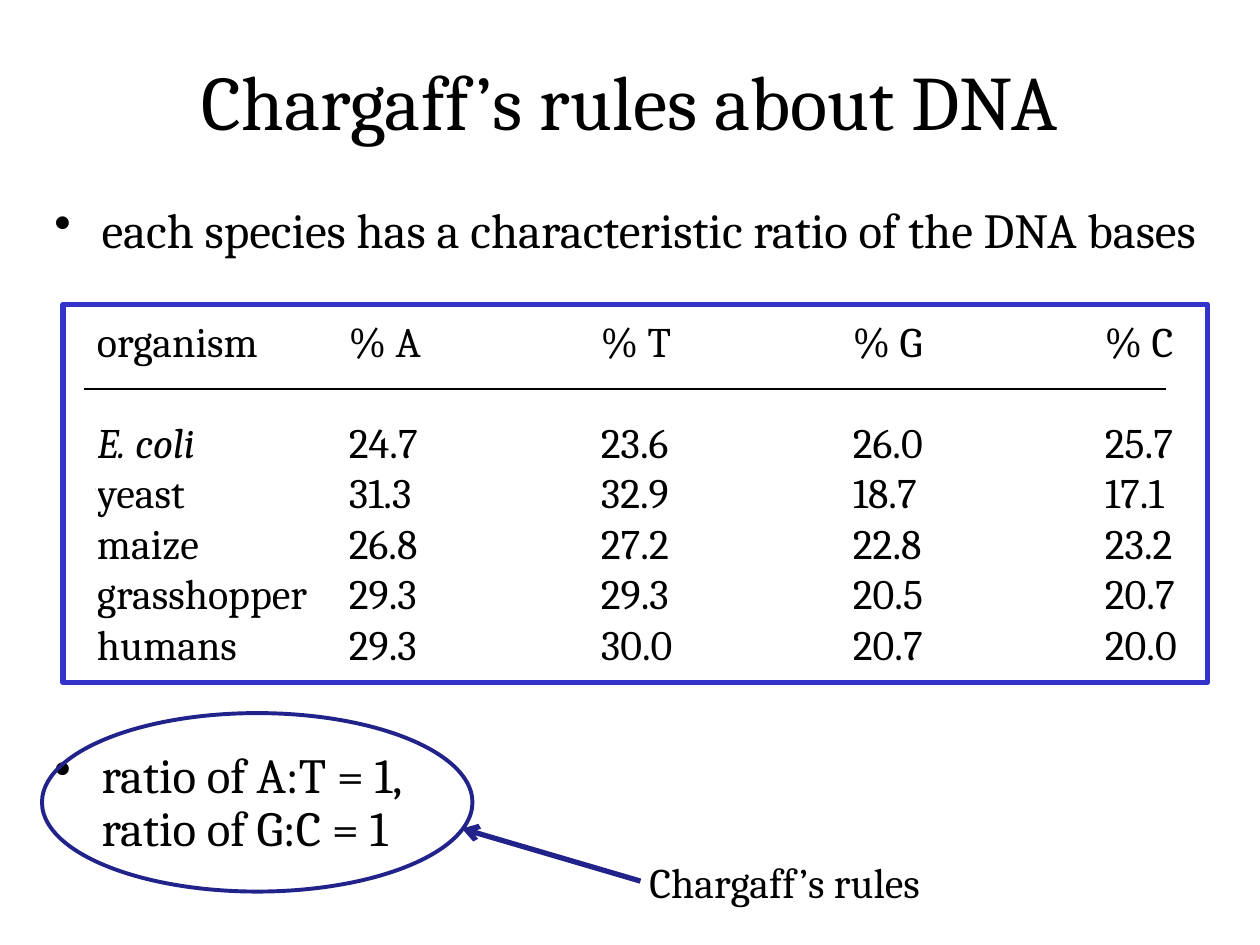
from lxml import etree
from pptx import Presentation
from pptx.dml.color import RGBColor
from pptx.enum.shapes import MSO_CONNECTOR, MSO_SHAPE
from pptx.enum.text import MSO_ANCHOR, PP_ALIGN
from pptx.oxml.ns import qn
from pptx.util import Pt

COLORS = {"text": "000000", "frame": "3333CC", "callout": "22228B"}
FONT = "Cambria"
LINE = 28.8  # height of one line of 24 pt text
ROWS = [
    ("organism", "% A", "% T", "% G", "% C"),
    ("E. coli", "24.7", "23.6", "26.0", "25.7"),
    ("yeast", "31.3", "32.9", "18.7", "17.1"),
    ("maize", "26.8", "27.2", "22.8", "23.2"),
    ("grasshopper", "29.3", "29.3", "20.5", "20.7"),
    ("humans", "29.3", "30.0", "20.7", "20.0"),
]


def color(name):
    return RGBColor.from_string(COLORS[name])


def write(para, text, size, italic=False):
    span = para.add_run()
    span.text = text
    formats = {"name": FONT, "size": Pt(size), "italic": italic}
    for name, value in formats.items():
        setattr(span.font, name, value)
    span.font.color.rgb = color("text")


def add_text(page, box, text, size, wrap=True, anchor=MSO_ANCHOR.TOP, align=PP_ALIGN.LEFT):
    frame = page.shapes.add_textbox(*map(Pt, box)).text_frame
    frame.word_wrap = wrap
    frame.vertical_anchor = anchor
    para = frame.paragraphs[0]
    para.alignment = align
    write(para, text, size)
    return para


def add_bullet(page, box, text):
    para = add_text(page, box, text, 28)
    para.line_spacing = 0.9
    props = para._p.get_or_add_pPr()
    props.set("marL", str(Pt(27)))
    props.set("indent", str(Pt(-27)))
    etree.SubElement(props, qn("a:buChar")).set("char", "•")


def add_outline(page, kind, box, line_color, width):
    shape = page.shapes.add_shape(kind, *map(Pt, box))
    shape.shadow.inherit = False
    shape.fill.background()
    shape.line.color.rgb = color(line_color)
    shape.line.width = Pt(width)


def add_line(page, start, end, line_color, width, arrow=False):
    line = page.shapes.add_connector(MSO_CONNECTOR.STRAIGHT, *map(Pt, start + end))
    line.line.color.rgb = color(line_color)
    line.line.width = Pt(width)
    props = line._element.spPr
    if arrow:
        etree.SubElement(props.find(qn("a:ln")), qn("a:tailEnd")).set("type", "arrow")
    etree.SubElement(props, qn("a:effectLst"))


def add_base_table(page, box):
    """Framed table of base percentages, with a rule below the header."""
    left, top, width, height = box
    widths = [144] * 4 + [58]
    heights = [2 * LINE] + [LINE] * (len(ROWS) - 1)
    table = page.shapes.add_table(
        len(ROWS), len(widths), Pt(left + 19.4), Pt(top + 8.8),
        Pt(sum(widths)), Pt(sum(heights))).table
    table.first_row = table.horz_banding = False
    for column, size in zip(table.columns, widths):
        column.width = Pt(size)
    for row, size, values in zip(table.rows, heights, ROWS):
        row.height = Pt(size)
        for cell, value in zip(row.cells, values):
            cell.fill.background()
            for side in ("left", "right", "top", "bottom"):
                setattr(cell, f"margin_{side}", 0)
            write(cell.text_frame.paragraphs[0], value, 24, italic=value == "E. coli")
    rule = top + 48.3
    add_line(page, (left + 12, rule), (left + width - 23.8, rule), "text", 0.75)
    add_outline(page, MSO_SHAPE.RECTANGLE, box, "frame", 3)


def add_rules_callout(page, box):
    """Ratios in an ellipse, with an arrow from their label."""
    left, top, width, height = box
    add_bullet(page, (left, top + 18, width, 60), "ratio of A:T = 1, ratio of G:C = 1")
    add_outline(page, MSO_SHAPE.OVAL, box, "callout", 2.25)
    add_line(page, (left + 342, top + 96), (left + 240, top + 66), "callout", 3, arrow=True)
    add_text(page, (left + 340, top + 78.5, 170.6, 36), "Chargaff’s rules", 24, wrap=False)


def main():
    deck = Presentation()
    deck.slide_width, deck.slide_height = Pt(720), Pt(540)
    page = deck.slides.add_slide(deck.slide_layouts[6])
    add_text(page, (54, 12, 612, 90), "Chargaff’s rules about DNA", 44,
             anchor=MSO_ANCHOR.MIDDLE, align=PP_ALIGN.CENTER)
    add_bullet(page, (24, 114, 678, 60),
               "each species has a characteristic ratio of the DNA bases")
    add_base_table(page, (36, 174, 654, 216))
    add_rules_callout(page, (24, 407.5, 246, 102))
    deck.save("out.pptx")


if __name__ == "__main__":
    main()
